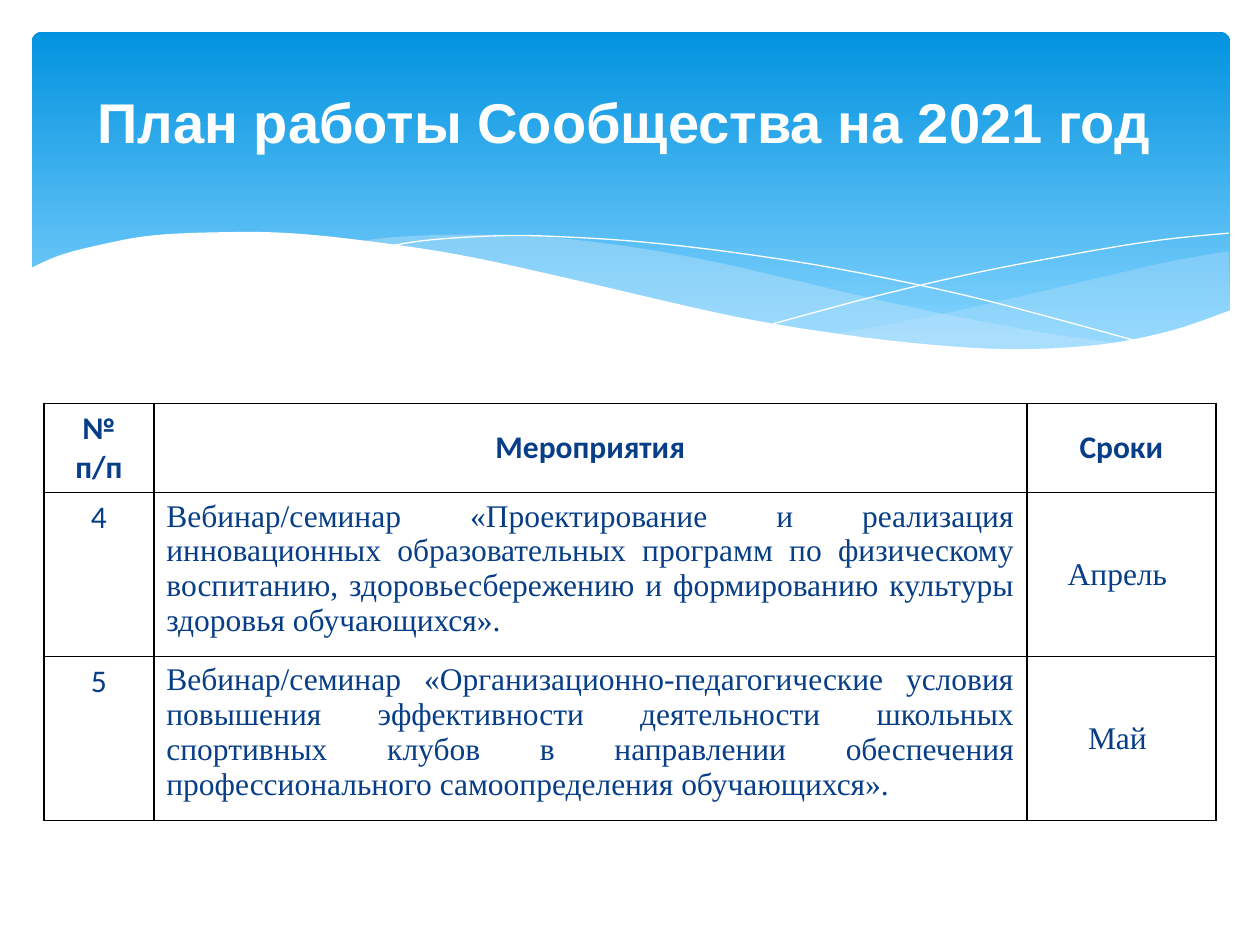
from lxml.etree import SubElement
from pptx import Presentation
from pptx.dml.color import RGBColor
from pptx.enum.shapes import MSO_SHAPE as Shape
from pptx.enum.text import MSO_ANCHOR as Anchor, PP_ALIGN as Align
from pptx.oxml.ns import qn
from pptx.util import Cm, Pt

SKY = RGBColor(0x02, 0x93, 0xE0)
LIGHT_SKY = RGBColor(0x83, 0xD3, 0xFE)
MIST = RGBColor(0xC6, 0xE7, 0xFC)
WHITE = RGBColor(0xFF, 0xFF, 0xFF)
BLACK = RGBColor(0x00, 0x00, 0x00)
NAVY = RGBColor(0x07, 0x3E, 0x87)

RIGHT_WAVE = [
    [(24.13, 4.42), (22.76, 4.67), (21.23, 5.03), (18.49, 5.66), (16.15, 6.1)],
    [(16.15, 6.1), (17.27, 6.25), (18.59, 6.38), (19.76, 6.43), (21.06, 6.38),
     (22.35, 6.2), (23.29, 5.94), (24.16, 5.64)],
]
MIDDLE_WAVE = [
    [(22.05, 6.3), (20.62, 6.1), (19.05, 5.82), (17.3, 5.46), (15.34, 5), (13.82, 4.65),
     (12.42, 4.39), (11.18, 4.22), (10.03, 4.11), (8.53, 4.09), (7.32, 4.14), (6.63, 4.22)],
    [(6.63, 4.22), (8.05, 4.42), (9.63, 4.72), (10.77, 5), (12.83, 5.46), (14.63, 5.84),
     (16.26, 6.12), (17.7, 6.32), (19.3, 6.43), (20.65, 6.43), (22.05, 6.3)],
]
FALLING_LINE = [
    [(7.21, 4.32), (8.1, 4.19), (9.55, 4.11), (10.8, 4.14), (12.32, 4.24), (14.15, 4.45),
     (16.26, 4.78), (18.67, 5.28), (20.47, 5.74), (22.4, 6.27)],
]
RISING_LINE = [
    [(14.94, 5.89), (17.02, 5.33), (19.08, 4.85), (21.36, 4.42), (22.83, 4.19), (24.13, 4.06)],
]
WHITE_WAVE = [
    [(24.18, 5.61), (22.99, 6.02), (21.59, 6.3), (19.91, 6.4), (18.26, 6.32), (16.33, 6.1),
     (14.07, 5.72), (10.72, 4.95), (8.64, 4.5), (6.78, 4.22), (5.21, 4.06), (3.86, 4.04),
     (2.39, 4.11), (1.27, 4.32), (0.53, 4.52), (-0.05, 4.78)],
    [(-0.05, 7.72), (24.18, 7.72)],
]

HEADINGS = ["№ п/п", "Мероприятия", "Сроки"]
EVENTS = [
    ("4", "Вебинар/семинар «Проектирование и реализация инновационных образовательных программ "
          "по физическому воспитанию, здоровьесбережению и формированию культуры здоровья "
          "обучающихся». ", "Апрель "),
    ("5", "Вебинар/семинар «Организационно-педагогические условия повышения эффективности "
          "деятельности школьных спортивных клубов в направлении обеспечения профессионального "
          "самоопределения обучающихся». ", "Май "),
]
COLUMN_WIDTHS = [2.21, 17.6, 3.81]
ROW_HEIGHTS = [1.8, 3.07, 3.07]


def smooth_curve(knots, steps=5):
    """Return points of a Catmull-Rom curve through the knots."""
    ends = [knots[0], *knots, knots[-1]]
    points = [knots[0]]
    for a, b, c, d in zip(ends, ends[1:], ends[2:], ends[3:]):
        for step in range(1, steps + 1):
            t = step / steps
            points.append(tuple(
                q + t * (r - p) / 2 + t**2 * (2 * p - 5 * q + 4 * r - s) / 2
                + t**3 * (3 * q - p - 3 * r + s) / 2
                for p, q, r, s in zip(a, b, c, d)))
    return points


def add_curve(page, left, top, curves, fill=None, opacity=100):
    """Draw a filled wave, or a white hairline when no fill is given."""
    points = [(Cm(left + x), Cm(top + y)) for knots in curves for x, y in smooth_curve(knots)]
    builder = page.shapes.build_freeform(*points[0])
    builder.add_line_segments(points[1:], close=fill is not None)
    curve = builder.convert_to_shape()
    curve.shadow.inherit = False
    if fill is None:
        curve.fill.background()
        curve.line.color.rgb = WHITE
        curve.line.width = Pt(0)
        return
    curve.line.fill.background()
    curve.fill.solid()
    curve.fill.fore_color.rgb = fill
    if opacity < 100:
        color = curve.fill._xPr.find(qn("a:solidFill"))[0]
        SubElement(color, qn("a:alpha"), val=str(opacity * 1000))


def add_text(frame, text, size, font, color, align, bold=False):
    """Write one run in the first paragraph of a text frame."""
    para = frame.paragraphs[0]
    para.alignment = align
    span = para.add_run()
    span.text = text
    span.font.size = Pt(size)
    span.font.name = font
    span.font.bold = bold
    span.font.color.rgb = color


def add_banner(page, left, top, width, height):
    """Draw the gradient banner with its waves."""
    panel = page.shapes.add_shape(
        Shape.ROUNDED_RECTANGLE, Cm(left), Cm(top), Cm(width), Cm(height))
    panel.adjustments[0] = 0.03
    panel.shadow.inherit = False
    panel.line.fill.background()
    panel.fill.gradient()
    panel.fill.gradient_angle = 270
    for stop, color, position in zip(panel.fill.gradient_stops, (SKY, LIGHT_SKY), (0, 0.9)):
        stop.color.rgb = color
        stop.position = position
    add_curve(page, left, top, RIGHT_WAVE, MIST, 29)
    add_curve(page, left, top, MIDDLE_WAVE, MIST, 40)
    add_curve(page, left, top, FALLING_LINE)
    add_curve(page, left, top, RISING_LINE)
    add_curve(page, left, top, WHITE_WAVE, WHITE)


def add_title(page, left, top, width, height):
    """Place the centred title."""
    box = page.shapes.add_textbox(Cm(left), Cm(top), Cm(width), Cm(height))
    frame = box.text_frame
    frame.word_wrap = True
    frame.vertical_anchor = Anchor.MIDDLE
    add_text(frame, "План работы Сообщества на 2021 год", 32, "Arial", WHITE, Align.CENTER, True)


def add_borders(cell):
    """Give a cell thin black lines on all four sides."""
    properties = cell._tc.get_or_add_tcPr()
    for side in ("lnL", "lnR", "lnT", "lnB"):
        line = SubElement(properties, qn(f"a:{side}"), w=str(Pt(1)))
        fill = SubElement(line, qn("a:solidFill"))
        SubElement(fill, qn("a:srgbClr"), val=str(BLACK))


def add_plan(page, left, top):
    """Build the table of events."""
    rows = [HEADINGS, *EVENTS]
    table = page.shapes.add_table(
        len(rows), len(HEADINGS), Cm(left), Cm(top),
        Cm(sum(COLUMN_WIDTHS)), Cm(sum(ROW_HEIGHTS))).table
    table.first_row = table.horz_banding = False
    for column, width in zip(table.columns, COLUMN_WIDTHS):
        column.width = Cm(width)
    for row, height in zip(table.rows, ROW_HEIGHTS):
        row.height = Cm(height)
    for i, texts in enumerate(rows):
        for j, text in enumerate(texts):
            cell = table.cell(i, j)
            heading = i == 0
            add_borders(cell)
            cell.fill.background()
            cell.vertical_anchor = Anchor.MIDDLE if heading or j == 2 else Anchor.TOP
            font = "Calibri" if heading or j == 0 else "Times New Roman"
            align = Align.JUSTIFY if j == 1 and not heading else Align.CENTER
            add_text(cell.text_frame, text, 18, font, NAVY, align, heading)


def main():
    """Build and save the slide."""
    deck = Presentation()
    deck.slide_width, deck.slide_height = Cm(25.4), Cm(19.05)
    page = deck.slides.add_slide(deck.slide_layouts[6])
    add_banner(page, 0.64, 0.64, 24.16, 6.86)
    add_title(page, 0.69, 0.71, 23.8, 3.48)
    add_plan(page, 0.89, 8.13)
    deck.save("out.pptx")


if __name__ == "__main__":
    main()
